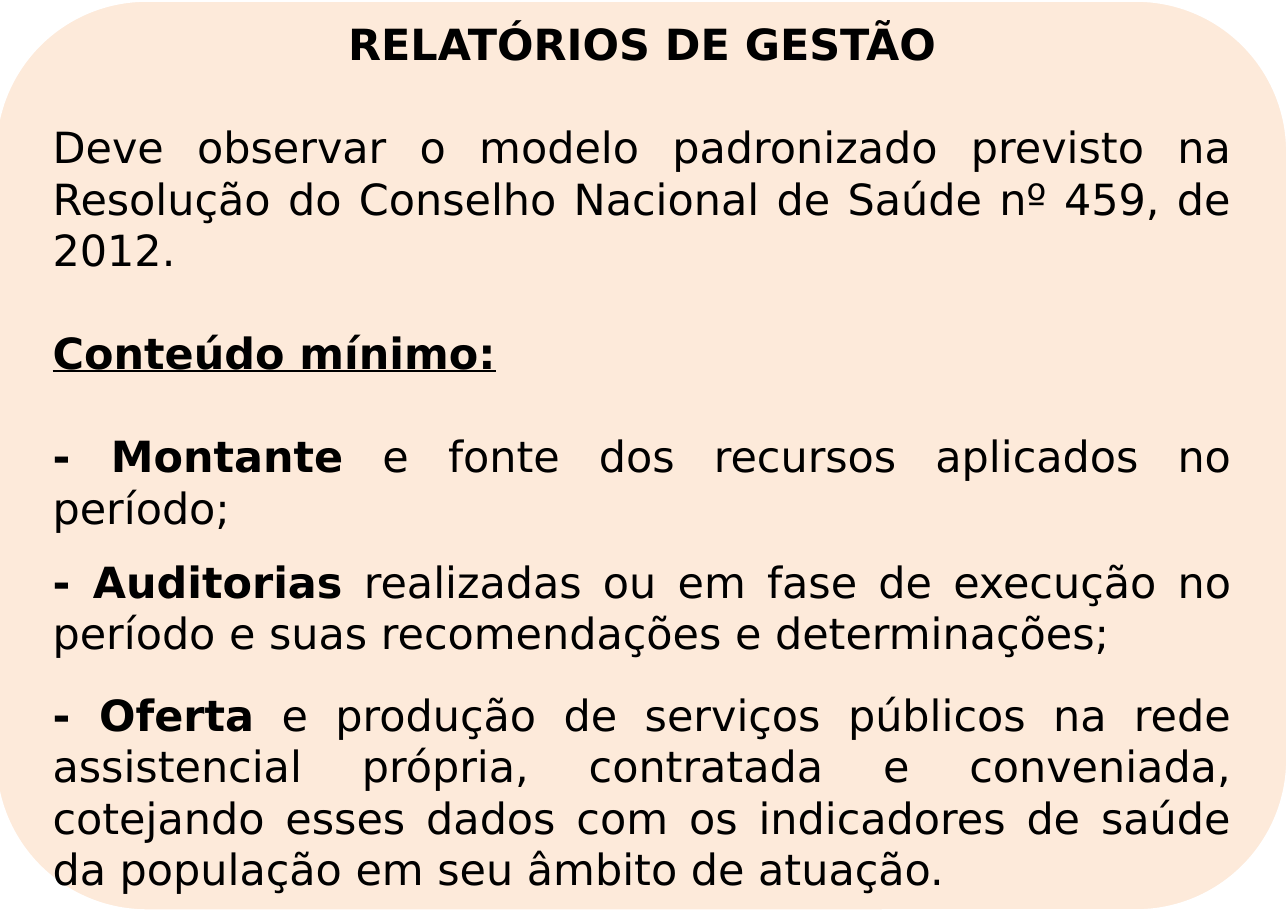
from dataclasses import dataclass

from pptx import Presentation
from pptx.dml.color import RGBColor
from pptx.enum.shapes import MSO_SHAPE
from pptx.enum.text import MSO_ANCHOR, PP_ALIGN
from pptx.util import Inches, Pt


@dataclass(frozen=True)
class Theme:
    panel: RGBColor = RGBColor(0xFD, 0xEA, 0xDA)
    outline: RGBColor = RGBColor(0xFF, 0xFF, 0xFF)
    ink: RGBColor = RGBColor(0, 0, 0)
    font: str = "DejaVu Sans"
    size: float = 24
    line_gap: float = 28.8
    outline_width: float = 2


THEME = Theme()
WIDTH, HEIGHT = Inches(10), Inches(7.08)
BOLD = {"bold": True}
UNDERLINED = {"bold": True, "underline": True}

# Each paragraph: alignment, space before in points, spans of (text, format)
PARAGRAPHS = [
    (PP_ALIGN.CENTER, 0, [("RELATÓRIOS DE GESTÃO", BOLD)]),
    (PP_ALIGN.JUSTIFY, THEME.line_gap, [
        ("Deve observar o modelo padronizado previsto na Resolução do "
         "Conselho Nacional de Saúde nº 459, de 2012.", {})]),
    (PP_ALIGN.JUSTIFY, THEME.line_gap, [("Conteúdo mínimo:", UNDERLINED)]),
    (PP_ALIGN.JUSTIFY, THEME.line_gap, [
        ("- Montante", BOLD),
        (" e fonte dos recursos aplicados no período;", {})]),
    (PP_ALIGN.JUSTIFY, 12.6, [
        ("- Auditorias", BOLD),
        (" realizadas ou em fase de execução no período e suas "
         "recomendações e determinações;", {})]),
    (PP_ALIGN.JUSTIFY, 16.8, [
        ("- Oferta", BOLD),
        (" e produção de serviços públicos na rede assistencial própria, "
         "contratada e conveniada, cotejando esses dados com os indicadores "
         "de saúde da população em seu âmbito de atuação.", {})]),
]


def set_all(target, values):
    for name, value in values.items():
        setattr(target, name, value)


def place(left, top, width, height):
    """Turn shares of the slide's size into lengths."""
    return (int(left * WIDTH), int(top * HEIGHT),
            int(width * WIDTH), int(height * HEIGHT))


def add_panel(page, area):
    panel = page.shapes.add_shape(MSO_SHAPE.ROUNDED_RECTANGLE, *place(*area))
    panel.shadow.inherit = False
    panel.fill.solid()
    panel.fill.fore_color.rgb = THEME.panel
    panel.line.color.rgb = THEME.outline
    panel.line.width = Pt(THEME.outline_width)


def add_span(para, text, style):
    span = para.add_run()
    span.text = text
    set_all(span.font, {"name": THEME.font, "size": Pt(THEME.size), **style})
    span.font.color.rgb = THEME.ink


def add_text(page, area, paragraphs):
    frame = page.shapes.add_textbox(*place(*area)).text_frame
    margins = ("margin_left", "margin_top", "margin_right", "margin_bottom")
    set_all(frame, {"word_wrap": True, "vertical_anchor": MSO_ANCHOR.MIDDLE,
                    **dict.fromkeys(margins, Inches(0.1))})
    for index, (alignment, gap, spans) in enumerate(paragraphs):
        para = frame.add_paragraph() if index else frame.paragraphs[0]
        set_all(para, {"alignment": alignment, "space_before": Pt(gap)})
        for text, style in spans:
            add_span(para, text, style)


def main():
    deck = Presentation()
    set_all(deck, {"slide_width": WIDTH, "slide_height": HEIGHT})
    page = deck.slides.add_slide(deck.slide_layouts[6])
    add_panel(page, (-0.004, 0, 1.004, 0.999))
    add_text(page, (0.031, 0.05, 0.935, 0.9), PARAGRAPHS)
    deck.save("out.pptx")


if __name__ == "__main__":
    main()
